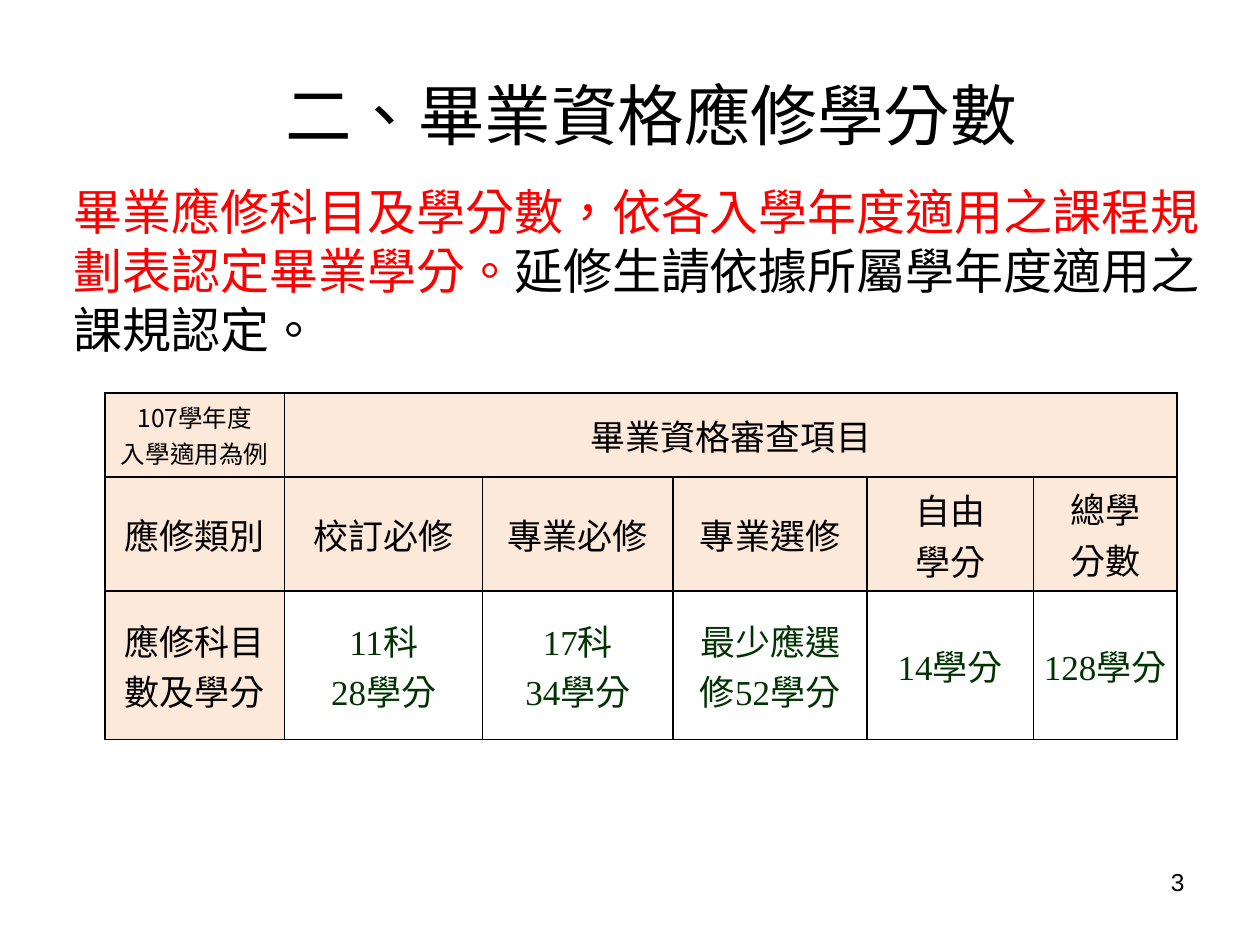
import lxml.etree
import pptx
import pptx.dml.color
import pptx.enum.lang
import pptx.enum.text
import pptx.oxml.ns
import pptx.util

Cm = pptx.util.Cm
Align = pptx.enum.text.PP_ALIGN
Anchor = pptx.enum.text.MSO_ANCHOR
SANS = "Noto Sans CJK SC"
SERIF = "Times New Roman"
BLACK, RED, GREEN, PEACH = "000000", "FF0000", "003300", "FDE9D9"
COLUMN_WIDTHS = [3.63, 3.99, 3.84, 3.91, 3.35, 2.9]
ROW_HEIGHTS = [1.7, 2.29, 3]
CREDIT_ROWS = [
    [["107學年度", "入學適用為例"], ["畢業資格審查項目"]],
    [["應修類別"], ["校訂必修"], ["專業必修"], ["專業選修"], ["自由", "學分"], ["總學", "分數"]],
    [["應修科目數及學分"], ["11科", "28學分"], ["17科", "34學分"], ["最少應選修52學分"],
     ["14學分"], ["128學分"]],
]


def colour(value):
    """Return the colour for a hex string."""
    return pptx.dml.color.RGBColor.from_string(value)


def set_attributes(target, values):
    """Set every named value on the target."""
    for name, value in values.items():
        setattr(target, name, value)


def add_span(para, text, size, face, ink, east_face=SANS):
    """Add a run with its Latin and East Asian typefaces."""
    span = para.add_run()
    span.text = text
    set_attributes(span.font, {
        "size": pptx.util.Pt(size), "name": face,
        "language_id": pptx.enum.lang.MSO_LANGUAGE_ID.TRADITIONAL_CHINESE,
    })
    span.font.color.rgb = colour(ink)
    east = lxml.etree.SubElement(span.font._element, pptx.oxml.ns.qn("a:ea"))
    east.set("typeface", east_face)


def write_lines(frame, lines, para_format, size, face, east_face=SANS):
    """Fill a frame with paragraphs given as lists of (text, ink) spans."""
    for index, spans in enumerate(lines):
        para = frame.add_paragraph() if index else frame.paragraphs[0]
        set_attributes(para, para_format)
        for text, ink in spans:
            add_span(para, text, size, face, ink, east_face)


def add_box(page, box, anchor=Anchor.TOP):
    """Add a wrapping text box and return its frame."""
    frame = page.shapes.add_textbox(*map(Cm, box)).text_frame
    set_attributes(frame, {"word_wrap": True, "vertical_anchor": anchor})
    return frame


def add_title(page, box):
    """Place the centred heading."""
    para_format = {"alignment": Align.CENTER, "line_spacing": pptx.util.Pt(55)}
    face = "Noto Sans CJK JP"
    write_lines(add_box(page, box, Anchor.MIDDLE), [[("二、畢業資格應修學分數", BLACK)]],
                para_format, 38, face, face)


def add_rule_text(page, box):
    """Place the credit rule with its red emphasis."""
    lines = [
        [("畢業應修科目及學分數，依各入學年度適用之課程規", RED)],
        [("劃表認定畢業學分。", RED), ("延修生請依據所屬學年度適用之", BLACK)],
        [("課規認定。", BLACK)],
    ]
    para_format = {"alignment": Align.LEFT, "line_spacing": pptx.util.Pt(33.7)}
    write_lines(add_box(page, box), lines, para_format, 28, SANS)


def add_page_number(page, box):
    """Place the page number at the right."""
    write_lines(add_box(page, box), [[("3", BLACK)]], {"alignment": Align.RIGHT}, 14, "Arial")


def set_borders(cell, widths):
    """Draw the four cell edges with the given point widths."""
    properties = cell._tc.get_or_add_tcPr()
    for side, width in widths.items():
        line = lxml.etree.SubElement(properties, pptx.oxml.ns.qn(f"a:ln{side}"))
        line.set("w", str(pptx.util.Pt(width)))
        fill = lxml.etree.SubElement(line, pptx.oxml.ns.qn("a:solidFill"))
        lxml.etree.SubElement(fill, pptx.oxml.ns.qn("a:srgbClr")).set("val", BLACK)


def add_credit_table(page, left, top):
    """Place the credit table with thick outer edges."""
    last_row, last_column = len(ROW_HEIGHTS) - 1, len(COLUMN_WIDTHS) - 1
    table = page.shapes.add_table(
        last_row + 1, last_column + 1, Cm(left), Cm(top),
        Cm(sum(COLUMN_WIDTHS)), Cm(sum(ROW_HEIGHTS))).table
    set_attributes(table, {"first_row": False, "horz_banding": False})
    for column, width in zip(table.columns, COLUMN_WIDTHS):
        column.width = Cm(width)
    for row, height in zip(table.rows, ROW_HEIGHTS):
        row.height = Cm(height)
    table.cell(0, 1).merge(table.cell(0, last_column))

    for r in range(last_row + 1):
        for c in range(last_column + 1):
            cell = table.cell(r, c)
            set_borders(cell, {
                "L": 1 if c else 1.5, "R": 1.5 if c == last_column else 1,
                "T": 1 if r else 1.5, "B": 1,
            })
            is_value = r == last_row and c > 0
            if is_value:
                cell.fill.background()
            else:
                cell.fill.solid()
                cell.fill.fore_color.rgb = colour(PEACH)
            cell.vertical_anchor = Anchor.MIDDLE
            if c == last_column and r:
                sides = ("left", "right", "top", "bottom")
                set_attributes(cell, {f"margin_{side}": 0 for side in sides})
            if c < len(CREDIT_ROWS[r]):
                is_corner = r == c == 0
                lines = [[(text, GREEN if is_value else BLACK)] for text in CREDIT_ROWS[r][c]]
                write_lines(cell.text_frame, lines, {"alignment": Align.CENTER},
                            14 if is_corner else 20, SANS if is_corner else SERIF)


def main():
    """Build and save the deck."""
    deck = pptx.Presentation()
    set_attributes(deck, {"slide_width": Cm(25.4), "slide_height": Cm(19.05)})
    page = deck.slides.add_slide(deck.slide_layouts[6])
    add_title(page, (1.7, 1.02, 22.86, 2.21))
    add_credit_table(page, 2.11, 7.92)
    add_page_number(page, (18.21, 17.35, 5.92, 1.32))
    add_rule_text(page, (1.24, 3.53, 23.44, 3.86))
    deck.save("out.pptx")


if __name__ == "__main__":
    main()
